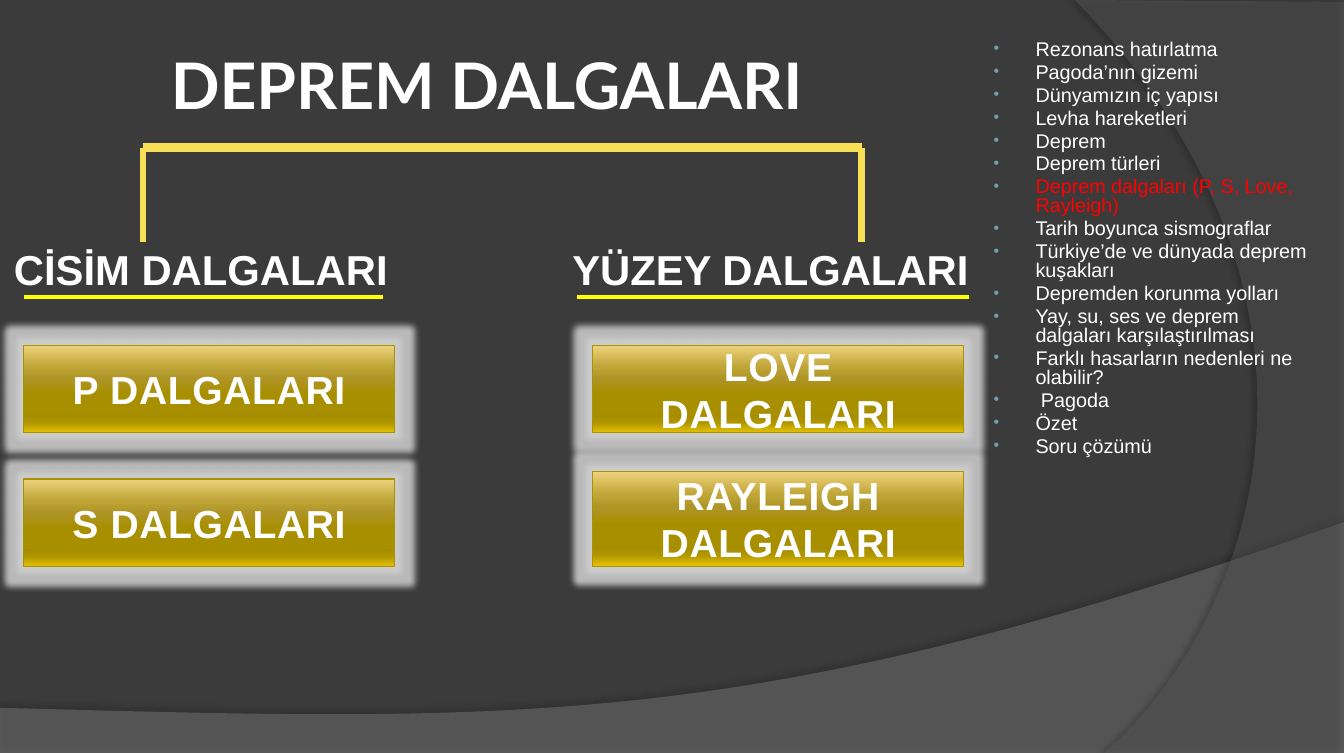
"""Build the earthquake waves slide: wave families on the left, lesson outline on the right."""
from lxml.etree import SubElement
from pptx import Presentation
from pptx.dml.color import RGBColor
from pptx.enum.shapes import MSO_CONNECTOR as Connector, MSO_SHAPE as Shape
from pptx.enum.text import MSO_ANCHOR as Anchor, PP_ALIGN as Align
from pptx.oxml.ns import qn
from pptx.util import Pt

hex_color = RGBColor.from_string


def add_child(parent, tag, **attributes):
    """Append a DrawingML element with the given attributes."""
    return SubElement(parent, qn(f"a:{tag}"), {name: str(value) for name, value in attributes.items()})


def write_text(shape, lines, frame_format, paragraph_format, font_format, color="FFFFFF"):
    """Fill a shape with formatted paragraphs and return them."""
    frame = shape.text_frame
    frame.text = "\n".join(lines)
    for name, value in frame_format.items():
        setattr(frame, name, value)
    for paragraph in frame.paragraphs:
        for name, value in paragraph_format.items():
            setattr(paragraph, name, value)
        font = paragraph.runs[0].font
        for name, value in font_format.items():
            setattr(font, name, value)
        font.color.rgb = hex_color(color)
    return frame.paragraphs


presentation = Presentation()
presentation.slide_width, presentation.slide_height = Pt(964), Pt(540)
slide = presentation.slides.add_slide(presentation.slide_layouts[6])
slide.background.fill.solid()
slide.background.fill.fore_color.rgb = hex_color("3B3B3B")
shapes = slide.shapes

swooshes = [
    ([(0, 507.6), (0, 540), (964, 540)],
     [(964, 374.4), (538.6, 524.9), (376.6, 517.7), (0, 507.6)], "7F7F7F", 45, 35, 270),
    ([(964, 1.4), (964, 540)],
     [(792, 540), (900.7, 445.7), (980.6, 216), (771, 0)], "5E5E5E", 40, 45, 180),
]
STEPS = 60
for corners, controls, color, opacity, shadow_opacity, direction in swooshes:
    curve = []
    for step in range(STEPS + 1):
        t = step / STEPS
        weights = ((1 - t) ** 3, 3 * t * (1 - t) ** 2, 3 * t ** 2 * (1 - t), t ** 3)
        curve.append(tuple(sum(w * point[axis] for w, point in zip(weights, controls)) for axis in (0, 1)))
    outline = [(Pt(x), Pt(y)) for x, y in corners + curve]
    builder = shapes.build_freeform(*outline[0])
    builder.add_line_segments(outline[1:])
    swoosh = builder.convert_to_shape()
    swoosh.shadow.inherit = False
    swoosh.fill.solid()
    swoosh.fill.fore_color.rgb = hex_color(color)
    swoosh.line.fill.background()
    properties = swoosh.element.spPr
    add_child(properties.find(f".//{qn('a:srgbClr')}"), "alpha", val=opacity * 1000)
    shadow = add_child(properties.find(qn("a:effectLst")), "outerShdw", blurRad=Pt(4), dist=Pt(4),
                       dir=direction * 60000, algn="ctr", rotWithShape=0)
    add_child(add_child(shadow, "srgbClr", val="000000"), "alpha", val=shadow_opacity * 1000)

NO_MARGINS = dict(margin_left=0, margin_right=0, margin_top=0, margin_bottom=0)
title = shapes.add_textbox(Pt(108), Pt(15), Pt(482), Pt(90))
write_text(title, ["DEPREM DALGALARI"],
           dict(word_wrap=True, vertical_anchor=Anchor.MIDDLE, **NO_MARGINS),
           dict(alignment=Align.CENTER), dict(name="Lato", size=Pt(46), bold=True))

for heading, left in (("CİSİM DALGALARI", 10), ("YÜZEY DALGALARI", 410.5)):
    heading_box = shapes.add_textbox(Pt(left), Pt(175), Pt(290), Pt(35))
    write_text(heading_box, [heading], dict(word_wrap=True, **NO_MARGINS), {},
               dict(name="Arial", size=Pt(30), bold=True))

lines = [
    (102.4, 105.8, 618, 105.8, "F7DF56", 6),
    (102.4, 105.8, 102.4, 173.5, "F7DF56", 4.5),
    (618, 105.8, 618, 173.5, "F7DF56", 4.5),
    (17.3, 213.1, 275, 213.1, "FFFF00", 3),
    (414, 213.1, 694.8, 213.1, "FFFF00", 3),
]
for start_x, start_y, end_x, end_y, color, width in lines:
    connector = shapes.add_connector(Connector.STRAIGHT, Pt(start_x), Pt(start_y), Pt(end_x), Pt(end_y))
    connector.line.color.rgb = hex_color(color)
    connector.line.width = Pt(width)
    add_child(connector.element.spPr, "effectLst")

GOLD_STOPS = [(0, "EED27E"), (25, "BFA536"), (38, "AF9527"), (55, "A88F00"),
              (80, "A68D00"), (88, "AF9500"), (100, "E6C100")]
waves = [
    ("P DALGALARI", 17, 247.5, 63),
    ("S DALGALARI", 17, 343.5, 63),
    ("LOVE DALGALARI", 425.3, 247.5, 63),
    ("RAYLEIGH DALGALARI", 425.3, 338, 68),
]
for wave, left, top, height in waves:
    box = shapes.add_shape(Shape.RECTANGLE, Pt(left), Pt(top), Pt(266), Pt(height))
    box.shadow.inherit = False
    box.fill.gradient()
    box.fill.gradient_angle = 270
    box.line.color.rgb = hex_color("AB9200")
    box.line.width = Pt(0.75)
    properties = box.element.spPr
    stops = properties.find(f".//{qn('a:gsLst')}")
    for stop in list(stops):
        stops.remove(stop)
    for position, color in GOLD_STOPS:
        add_child(add_child(stops, "gs", pos=position * 1000), "srgbClr", val=color)
    glow = add_child(properties.find(qn("a:effectLst")), "glow", rad=Pt(9))
    add_child(add_child(glow, "srgbClr", val="D0D0D0"), "alpha", val=85000)
    paragraphs = write_text(box, [wave], dict(word_wrap=True, vertical_anchor=Anchor.MIDDLE),
                            dict(alignment=Align.CENTER), dict(name="Arial", size=Pt(28), bold=True))
    paragraphs[0].runs[0].font._element.set("spc", "50")

topics = [
    "Rezonans hatırlatma",
    "Pagoda’nın gizemi",
    "Dünyamızın iç yapısı",
    "Levha hareketleri",
    "Deprem",
    "Deprem türleri",
    "Deprem dalgaları (P, S, Love, Rayleigh)",
    "Tarih boyunca sismograflar",
    "Türkiye’de ve dünyada deprem kuşakları",
    "Depremden korunma yolları",
    "Yay, su, ses ve deprem dalgaları karşılaştırılması",
    "Farklı hasarların nedenleri ne olabilir?",
    " Pagoda",
    "Özet",
    "Soru çözümü",
]
CURRENT_TOPIC = 6
outline_box = shapes.add_textbox(Pt(702.7), Pt(26), Pt(249), Pt(371))
paragraphs = write_text(outline_box, topics, dict(word_wrap=True),
                        dict(line_spacing=0.8, space_before=Pt(2.8)), dict(name="Arial", size=Pt(14.2)))
for paragraph in paragraphs:
    properties = paragraph._p.get_or_add_pPr()
    properties.set("marL", str(Pt(33)))
    properties.set("indent", str(-Pt(30)))
    add_child(add_child(properties, "buClr"), "srgbClr", val="6EA0B0")
    add_child(properties, "buSzPct", val=80000)
    add_child(properties, "buFont", typeface="Arial")
    add_child(properties, "buChar", char="•")
paragraphs[CURRENT_TOPIC].runs[0].font.color.rgb = hex_color("FF0000")

presentation.save("out.pptx")
